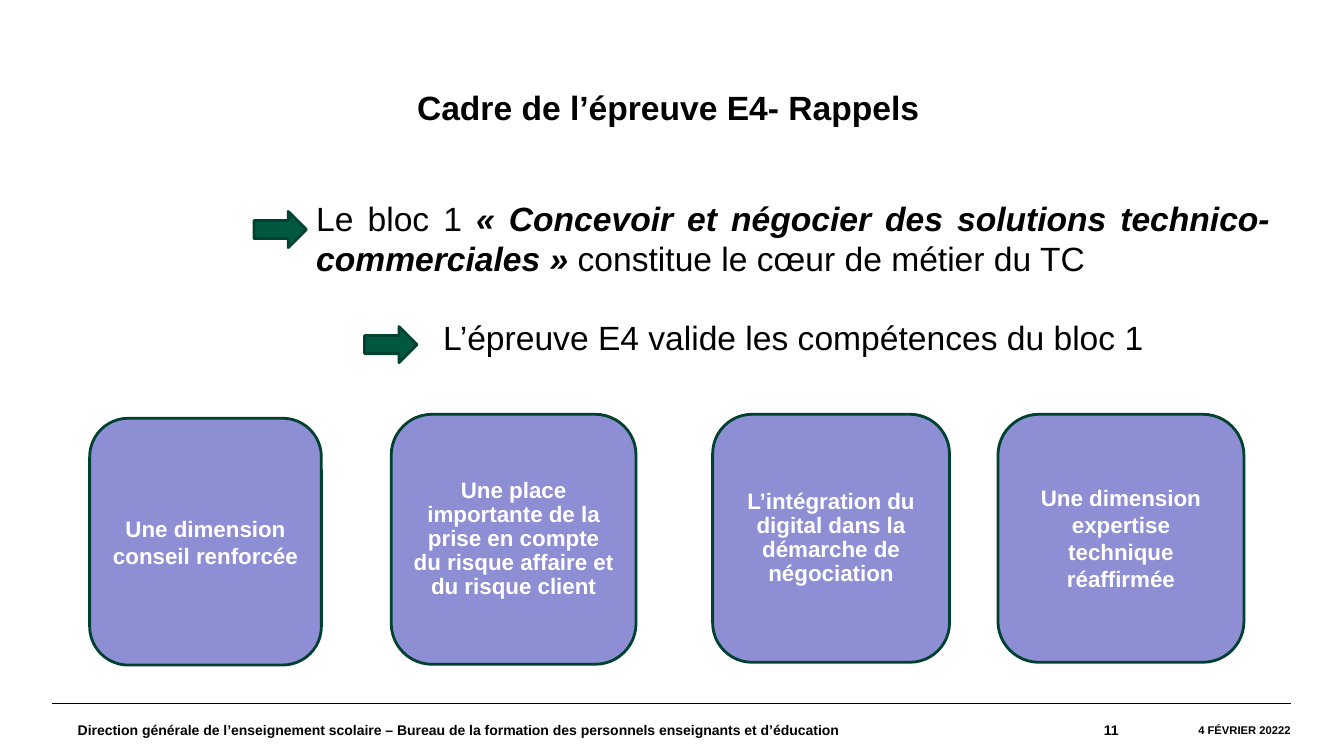
from dataclasses import dataclass

from lxml.etree import SubElement
from pptx import Presentation
from pptx.dml.color import RGBColor
from pptx.enum.shapes import MSO_CONNECTOR as Connector, MSO_SHAPE as Preset
from pptx.enum.text import MSO_ANCHOR as Anchor, PP_ALIGN as Align
from pptx.oxml.ns import qn
from pptx.util import Cm, Pt

COLORS = {
    "text": "000000",
    "card": "8E8ED5",
    "card_text": "FFFFFF",
    "arrow": "005841",
    "outline": "004130",
}
FONT = "Arial"
FOOTER_TOP = 17.73
FOOTER_HEIGHT = 1.32


@dataclass(frozen=True)
class Box:
    left: float
    top: float
    width: float
    height: float

    def lengths(self) -> tuple:
        return Cm(self.left), Cm(self.top), Cm(self.width), Cm(self.height)


@dataclass(frozen=True)
class Card:
    box: Box
    text: str
    line_spacing: float = 1.0


@dataclass(frozen=True)
class FooterItem:
    left: float
    width: float
    text: str
    size: int
    align: Align


CARDS = [
    Card(Box(2.26, 10.54, 5.84, 6.22), "Une dimension conseil renforcée"),
    Card(Box(9.86, 10.44, 6.17, 6.3),
         "Une place importante de la prise en compte du risque affaire et du risque client", 0.9),
    Card(Box(17.96, 10.44, 5.97, 6.25),
         "L’intégration du digital dans la démarche de négociation", 0.9),
    Card(Box(25.15, 10.44, 6.2, 6.25), "Une dimension expertise technique réaffirmée"),
]
ARROWS = [Box(6.4, 5.33, 1.32, 0.91), Box(9.19, 8.23, 1.32, 0.91)]
FOOTER = [
    FooterItem(1.96, 21.87,
               "Direction générale de l’enseignement scolaire – Bureau de la formation "
               "des personnels enseignants et d’éducation", 10, Align.LEFT),
    FooterItem(23.19, 5, "11", 10, Align.RIGHT),
    FooterItem(28.19, 4.34, "4 FÉVRIER 20222", 8, Align.RIGHT),
]


def color(name: str) -> RGBColor:
    return RGBColor.from_string(COLORS[name])


def add_run(paragraph, text: str, *, size: int, fill: str = "text",
            bold: bool = False, italic: bool = False) -> None:
    run = paragraph.add_run()
    run.text = text
    run.font.name = FONT
    run.font.size = Pt(size)
    run.font.bold = bold
    run.font.italic = italic
    run.font.color.rgb = color(fill)


def add_text_box(slide, box: Box):
    frame = slide.shapes.add_textbox(*box.lengths()).text_frame
    frame.word_wrap = True
    return frame


def add_preset(slide, preset: Preset, box: Box, fill: str):
    shape = slide.shapes.add_shape(preset, *box.lengths())
    shape.shadow.inherit = False
    shape.fill.solid()
    shape.fill.fore_color.rgb = color(fill)
    shape.line.color.rgb = color("outline")
    shape.line.width = Pt(2)
    return shape


def add_card(slide, card: Card) -> None:
    frame = add_preset(slide, Preset.ROUNDED_RECTANGLE, card.box, "card").text_frame
    frame.word_wrap = True
    frame.vertical_anchor = Anchor.MIDDLE
    paragraph = frame.paragraphs[0]
    paragraph.alignment = Align.CENTER
    paragraph.line_spacing = card.line_spacing
    add_run(paragraph, card.text, size=16, fill="card_text", bold=True)


def add_footer_item(slide, item: FooterItem) -> None:
    frame = add_text_box(slide, Box(item.left, FOOTER_TOP, item.width, FOOTER_HEIGHT))
    frame.margin_left = frame.margin_right = frame.margin_top = frame.margin_bottom = 0
    frame.vertical_anchor = Anchor.MIDDLE
    paragraph = frame.paragraphs[0]
    paragraph.alignment = item.align
    add_run(paragraph, item.text, size=item.size, bold=True)


def add_footer_rule(slide) -> None:
    rule = slide.shapes.add_connector(
        Connector.STRAIGHT, Cm(1.32), Cm(FOOTER_TOP), Cm(32.54), Cm(FOOTER_TOP))
    rule.line.color.rgb = color("text")
    rule.line.width = Pt(0.8)
    SubElement(rule._element.spPr, qn("a:effectLst"))


def add_title(slide) -> None:
    frame = add_text_box(slide, Box(10.26, 2.06, 19.46, 1.27))
    add_run(frame.paragraphs[0], "Cadre de l’épreuve E4- Rappels", size=24, bold=True)


def add_messages(slide) -> None:
    frame = add_text_box(slide, Box(7.72, 4.85, 24.54, 4.37))
    core = frame.paragraphs[0]
    core.alignment = Align.JUSTIFY
    add_run(core, "Le bloc 1 ", size=24)
    add_run(core, "« Concevoir et négocier des solutions technico-commerciales »",
            size=24, bold=True, italic=True)
    add_run(core, " constitue le cœur de métier du TC", size=24)
    exam = frame.add_paragraph()
    exam.alignment = Align.CENTER
    exam.space_before = Pt(27.6)
    add_run(exam, "L’épreuve E4 valide les compétences du bloc 1", size=24)


def main() -> None:
    presentation = Presentation()
    presentation.slide_width = Cm(33.87)
    presentation.slide_height = Cm(19.05)
    slide = presentation.slides.add_slide(presentation.slide_layouts[6])
    add_footer_rule(slide)
    add_title(slide)
    for card in CARDS:
        add_card(slide, card)
    add_messages(slide)
    for arrow in ARROWS:
        add_preset(slide, Preset.RIGHT_ARROW, arrow, "arrow")
    for item in FOOTER:
        add_footer_item(slide, item)
    presentation.save("out.pptx")


if __name__ == "__main__":
    main()
